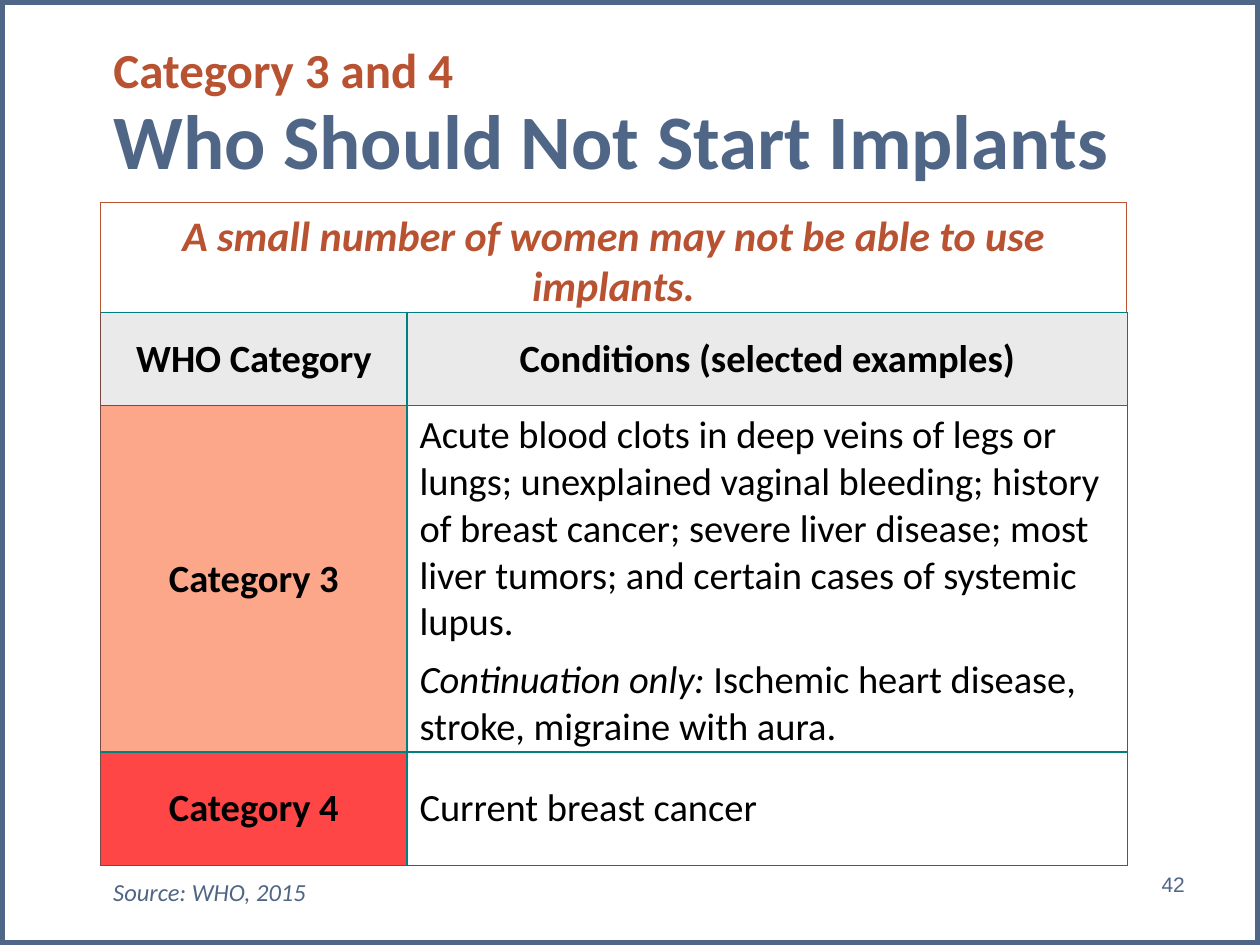
import pptx
import pptx.dml.color
import pptx.enum.shapes
import pptx.enum.text
import pptx.oxml.ns
import pptx.util
from lxml import etree
from pptx.util import Inches

RUST, SLATE, TEAL, BLACK = "B85231", "506687", "008080", "000000"
EDGE = "7A4A42"
GREY, PEACH, RED, WHITE = "EAEAEA", "FCA789", "FF4646", "FFFFFF"
MIDDLE = pptx.enum.text.MSO_ANCHOR.MIDDLE
CENTER = pptx.enum.text.PP_ALIGN.CENTER
LEFT = pptx.enum.text.PP_ALIGN.LEFT


def color(value):
    return pptx.dml.color.RGBColor.from_string(value)


class SlideBuilder:
    def __init__(self, slide, font="Calibri"):
        self.slide = slide
        self.font = font

    def run(self, paragraph, text, size, hue, bold=False, italic=False, font=None):
        run = paragraph.add_run()
        run.text = text
        run.font.name = font or self.font
        run.font.size = pptx.util.Pt(size)
        run.font.color.rgb = color(hue)
        run.font.bold = bold
        run.font.italic = italic

    def title(self, box, lines):
        title = self.slide.shapes.title
        title.left, title.top, title.width, title.height = map(Inches, box)
        frame = title.text_frame
        frame.word_wrap = True
        frame.auto_size = pptx.enum.text.MSO_AUTO_SIZE.NONE
        frame.vertical_anchor = MIDDLE
        paragraph = frame.paragraphs[0]
        paragraph.alignment = LEFT
        paragraph.line_spacing = 0.95
        for index, (text, size, hue) in enumerate(lines):
            if index:
                paragraph.add_line_break()
            self.run(paragraph, text, size, hue, bold=True)

    def text(self, box, text, size, hue, spacing=1.0, **style):
        shape = self.slide.shapes.add_textbox(*map(Inches, box))
        shape.text_frame.word_wrap = True
        paragraph = shape.text_frame.paragraphs[0]
        paragraph.line_spacing = spacing
        self.run(paragraph, text, size, hue, **style)

    def outline(self, box, hue, width):
        shape = self.slide.shapes.add_shape(
            pptx.enum.shapes.MSO_SHAPE.RECTANGLE, *map(Inches, box))
        shape.shadow.inherit = False
        shape.fill.background()
        shape.line.color.rgb = color(hue)
        shape.line.width = pptx.util.Pt(width)
        return shape

    def banner(self, box, text, size, hue):
        frame = self.outline(box, hue, 0.75).text_frame
        frame.word_wrap = True
        frame.vertical_anchor = pptx.enum.text.MSO_ANCHOR.TOP
        paragraph = frame.paragraphs[0]
        paragraph.alignment = CENTER
        self.run(paragraph, text, size, hue, bold=True, italic=True)

    def border(self, cell, side, hue, width):
        properties = cell._tc.get_or_add_tcPr()
        line = etree.SubElement(properties, pptx.oxml.ns.qn(f"a:ln{side}"),
                                w=str(pptx.util.Pt(width)))
        fill = etree.SubElement(line, pptx.oxml.ns.qn("a:solidFill"))
        etree.SubElement(fill, pptx.oxml.ns.qn("a:srgbClr"), val=hue)

    def cell(self, cell, paragraphs, fill, centered, outer_sides):
        for side in "LRTB":
            hue, width = (EDGE, 0.5) if side in outer_sides else (TEAL, 1)
            self.border(cell, side, hue, width)
        cell.fill.solid()
        cell.fill.fore_color.rgb = color(fill)
        cell.vertical_anchor = MIDDLE
        cell.margin_left = cell.margin_right = Inches(0.1)
        cell.margin_top = cell.margin_bottom = Inches(0.05)
        frame = cell.text_frame
        for index, runs in enumerate(paragraphs):
            paragraph = frame.add_paragraph() if index else frame.paragraphs[0]
            paragraph.alignment = CENTER if centered else LEFT
            if index:
                paragraph.space_before = pptx.util.Pt(6)
            for text, italic in runs:
                self.run(paragraph, text, 22, BLACK, bold=centered, italic=italic)

    def table(self, left, top, widths, heights, rows):
        table = self.slide.shapes.add_table(
            len(heights), len(widths), Inches(left), Inches(top),
            Inches(sum(widths)), Inches(sum(heights))).table
        for column, width in zip(table.columns, widths):
            column.width = Inches(width)
        for row, height in zip(table.rows, heights):
            row.height = Inches(height)
        for i, contents in enumerate(rows):
            for j, (paragraphs, fill) in enumerate(contents):
                outer_sides = "R" if j else "L"
                if i == len(rows) - 1:
                    outer_sides += "B"
                centered = i == 0 or j == 0
                self.cell(table.cell(i, j), paragraphs, fill, centered, outer_sides)


def plain(text):
    return [[(text, False)]]


def main():
    presentation = pptx.Presentation()
    presentation.slide_width = Inches(10)
    presentation.slide_height = Inches(7.5)
    slide = presentation.slides.add_slide(presentation.slide_layouts[5])
    builder = SlideBuilder(slide)

    builder.title((0.8, 0.29, 8.7, 1.25), [
        ("Category 3 and 4", 28, RUST),
        ("Who Should Not Start Implants", 44, SLATE),
    ])
    builder.banner((0.8, 1.61, 8.14, 0.91),
                   "A small number of women may not be able to use implants.", 24, RUST)
    builder.text((0.8, 6.94, 7.11, 0.36), "Source: WHO, 2015", 14, SLATE,
                 spacing=0.9, italic=True)
    builder.text((9.12, 6.87, 0.62, 0.3), "42", 12, SLATE, font="Arial")
    builder.outline((0, 0, 10, 7.5), SLATE, 5.25)

    category_3_conditions = [
        [("Acute blood clots in deep veins of legs or lungs; unexplained vaginal "
          "bleeding; history of breast cancer; severe liver disease; most liver "
          "tumors; and certain cases of systemic lupus.", False)],
        [("Continuation only:", True),
         (" Ischemic heart disease, stroke, migraine with aura.", False)],
    ]
    builder.table(0.8, 2.48, [2.43, 5.72], [0.74, 2.61, 0.9], [
        [(plain("WHO Category"), GREY), (plain("Conditions (selected examples)"), GREY)],
        [(plain("Category 3"), PEACH), (category_3_conditions, WHITE)],
        [(plain("Category 4"), RED), (plain("Current breast cancer"), WHITE)],
    ])
    presentation.save("out.pptx")


if __name__ == "__main__":
    main()
